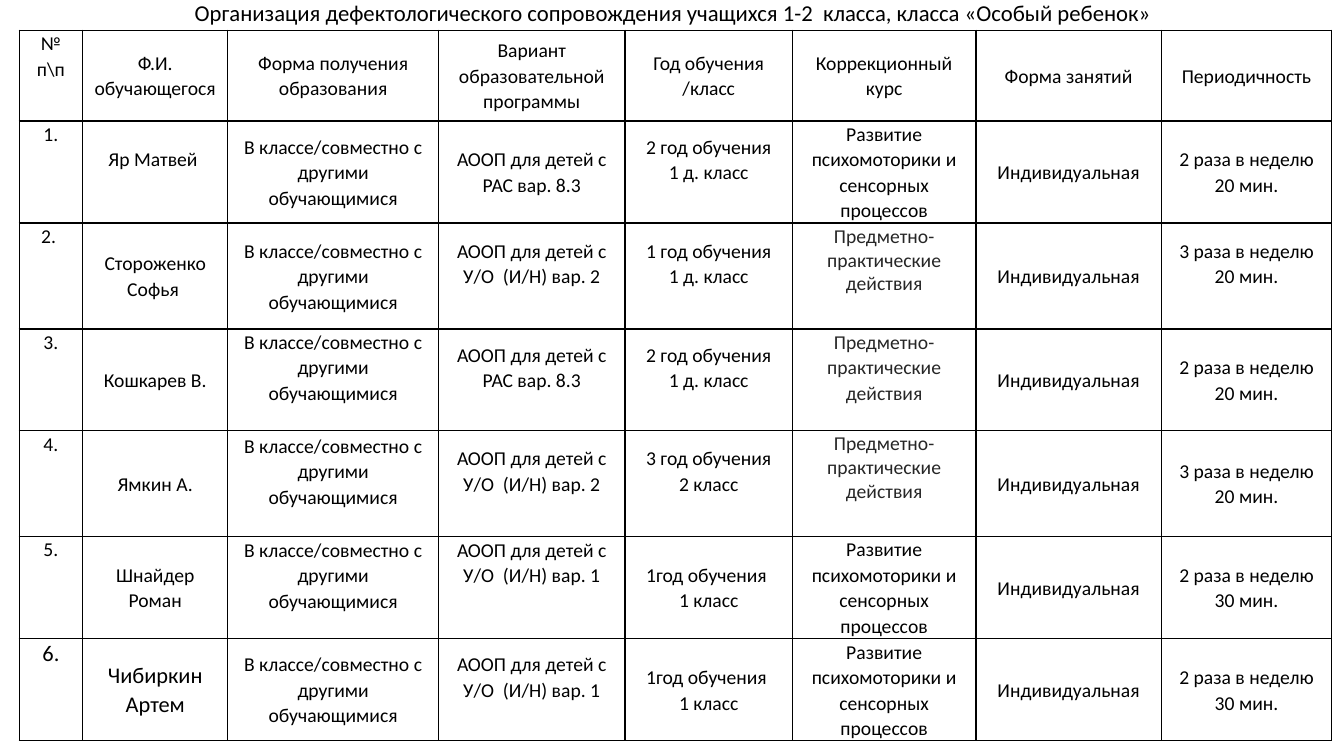
from lxml.etree import SubElement
from pptx import Presentation
from pptx.dml.color import RGBColor
from pptx.enum.text import MSO_ANCHOR as Anchor, PP_ALIGN as Align
from pptx.oxml.ns import qn
from pptx.util import Inches, Pt

COLORS = {"ink": "000000", "soft": "262626", "paper": "FFFFFF"}
FONT = "Calibri"

TITLE = "Организация дефектологического сопровождения учащихся 1-2  класса, класса «Особый ребенок»"
HEADERS = ["№ п\\п", "Ф.И. обучающегося", "Форма получения образования",
           "Вариант образовательной программы", "Год обучения /класс",
           "Коррекционный курс", "Форма занятий", "Периодичность"]
STUDY_FORM = "В классе/совместно с другими обучающимися"
LESSON_FORM = "Индивидуальная"
AUTISM = "АООП для детей с РАС вар. 8.3"
DISABILITY_1 = "АООП для детей с У/О  (И/Н) вар. 1"
DISABILITY_2 = "АООП для детей с У/О  (И/Н) вар. 2"
SENSORY = "Развитие психомоторики и сенсорных процессов"
PRACTICE = "Предметно-практические действия"

# number, name, programme, year and class, course, frequency
PUPILS = [
    ("1.", "Яр Матвей ", AUTISM, "2 год обучения\n1 д. класс", SENSORY, "2 раза в неделю\n20 мин."),
    ("2. ", "Стороженко Софья ", DISABILITY_2, "1 год обучения\n1 д. класс", PRACTICE,
     "3 раза в неделю\n20 мин."),
    ("3.", "Кошкарев В.", AUTISM, "2 год обучения\n1 д. класс", PRACTICE, "2 раза в неделю\n20 мин."),
    ("4.", "Ямкин А.", DISABILITY_2, "3 год обучения\n2 класс", PRACTICE, "3 раза в неделю\n20 мин."),
    ("5.", "Шнайдер Роман", DISABILITY_1, "1год обучения \n1 класс", SENSORY, "2 раза в неделю\n30 мин."),
    ("6.", "Чибиркин Артем", DISABILITY_1, "1год обучения \n1 класс", SENSORY, "2 раза в неделю\n30 мин."),
]
COLUMN_WIDTHS = [0.63, 1.44, 2.09, 1.85, 1.66, 1.82, 1.84, 1.69]
ROW_HEIGHTS = [0.9, 1.01, 1.05, 1.01, 1.05, 1.01, 1.01]
# Text lines left free at the bottom of a cell, by row and column
FREE_LINES = {
    1: {1: 1, 4: 1},
    2: {3: 1, 4: 1, 5: 1.25, 7: 1},
    3: {2: 1, 3: 1, 4: 1, 5: 1},
    4: {2: 1, 3: 1, 4: 1, 5: 1.25},
    5: {2: 1, 3: 2},
    6: {3: 1},
}
LINE_HEIGHT = 0.25
TIGHT_COURSES = {2, 4}
LARGE_ROW = 6


def write(frame, text, size=14, color="ink", spacing=1.07):
    frame.text = text
    for paragraph in frame.paragraphs:
        paragraph.alignment = Align.CENTER
        paragraph.line_spacing = spacing
        paragraph.space_before = paragraph.space_after = Pt(0)
        for run in paragraph.runs:
            run.font.size = Pt(size)
            run.font.name = FONT
            run.font.bold = False
            run.font.color.rgb = RGBColor.from_string(COLORS[color])


def add_borders(cell):
    properties = cell._tc.get_or_add_tcPr()
    for index, side in enumerate(("a:lnL", "a:lnR", "a:lnT", "a:lnB")):
        line = properties.makeelement(qn(side), {"w": str(Pt(1))})
        properties.insert(index, line)
        fill = SubElement(line, qn("a:solidFill"))
        SubElement(fill, qn("a:srgbClr"), val=COLORS["ink"])


def format_cell(cell, row, column):
    cell.margin_left = cell.margin_right = Inches(0.07)
    cell.margin_top = 0
    cell.margin_bottom = Inches(FREE_LINES.get(row, {}).get(column, 0) * LINE_HEIGHT)
    cell.vertical_anchor = Anchor.TOP if column == 0 else Anchor.MIDDLE
    cell.fill.solid()
    cell.fill.fore_color.rgb = RGBColor.from_string(COLORS["paper"])
    add_borders(cell)


def main():
    presentation = Presentation()
    presentation.slide_width, presentation.slide_height = Inches(13.33), Inches(7.5)
    slide = presentation.slides.add_slide(presentation.slide_layouts[5])

    title = slide.shapes.title
    title.left, title.top, title.width, title.height = map(Inches, (0.92, 0.02, 11.5, 0.25))
    heading = title.text_frame
    heading.margin_top = heading.margin_bottom = 0
    heading.vertical_anchor = Anchor.MIDDLE
    write(heading, TITLE, size=16.2, spacing=0.9)

    rows = [HEADERS] + [
        (number, name, STUDY_FORM, programme, year, course, LESSON_FORM, frequency)
        for number, name, programme, year, course, frequency in PUPILS]
    schedule = slide.shapes.add_table(
        len(rows), len(HEADERS), Inches(0.19), Inches(0.3),
        Inches(sum(COLUMN_WIDTHS)), Inches(sum(ROW_HEIGHTS))).table
    schedule.first_row = schedule.horz_banding = False
    for column, width in zip(schedule.columns, COLUMN_WIDTHS):
        column.width = Inches(width)
    for row, height in zip(schedule.rows, ROW_HEIGHTS):
        row.height = Inches(height)

    for r, texts in enumerate(rows):
        for c, text in enumerate(texts):
            cell = schedule.cell(r, c)
            format_cell(cell, r, c)
            write(cell.text_frame, text,
                  size=16 if r == LARGE_ROW and c < 2 else 14,
                  color="soft" if text == PRACTICE else "ink",
                  spacing=1.0 if r in TIGHT_COURSES and c == 5 else 1.07)

    presentation.save("out.pptx")


if __name__ == "__main__":
    main()
